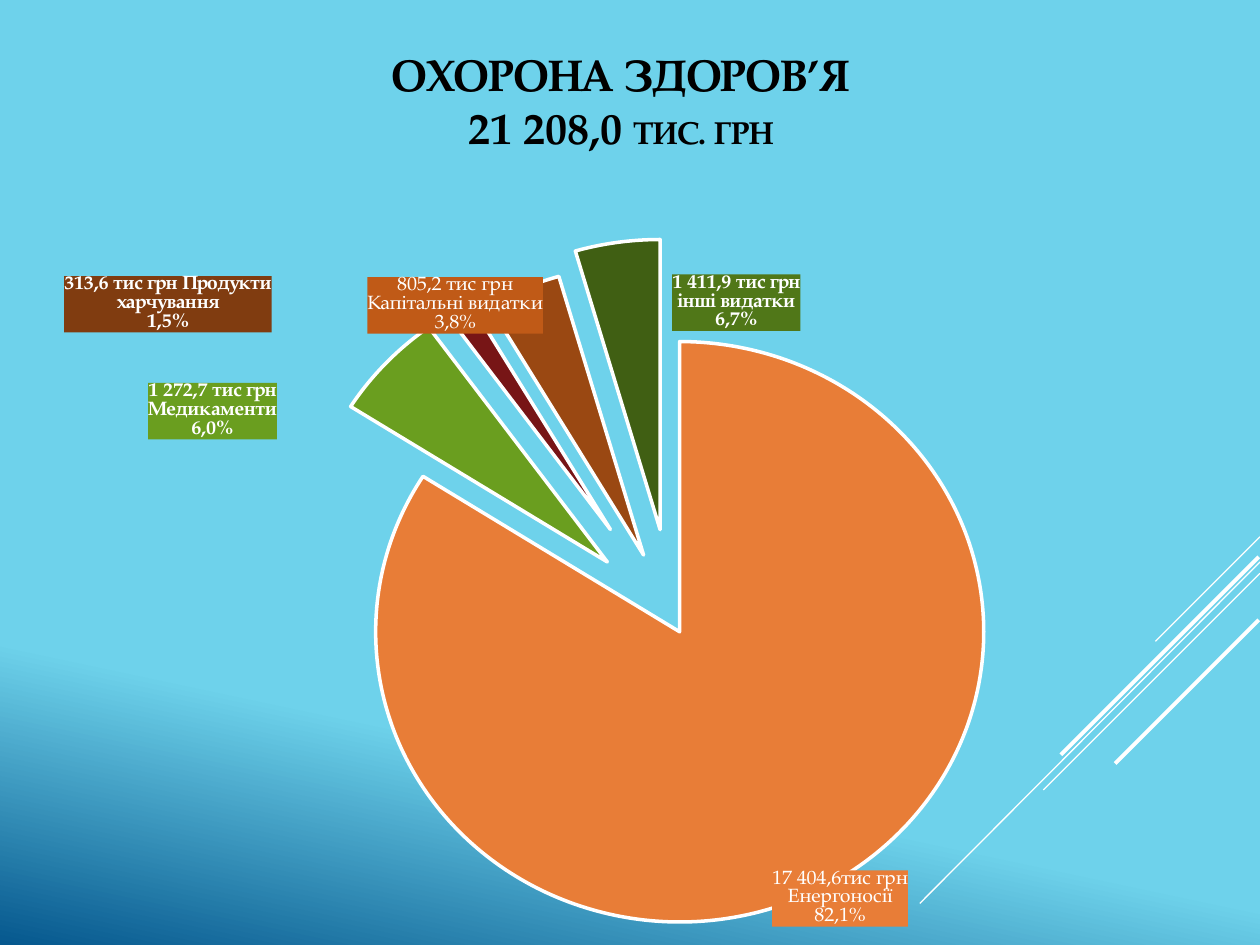
from lxml import etree
from pptx import Presentation
from pptx.chart.data import CategoryChartData
from pptx.dml.color import RGBColor
from pptx.enum.chart import XL_CHART_TYPE, XL_LABEL_POSITION
from pptx.enum.shapes import MSO_CONNECTOR
from pptx.enum.text import MSO_ANCHOR, PP_ALIGN
from pptx.oxml import parse_xml
from pptx.oxml.ns import nsdecls, qn
from pptx.util import Inches, Pt

PIE = XL_CHART_TYPE.PIE
OUTSIDE_END = XL_LABEL_POSITION.OUTSIDE_END
STRAIGHT = MSO_CONNECTOR.STRAIGHT
MIDDLE = MSO_ANCHOR.MIDDLE
CENTER = PP_ALIGN.CENTER

BLACK = RGBColor(0x00, 0x00, 0x00)
WHITE = RGBColor(0xFF, 0xFF, 0xFF)
SKY = RGBColor(0x6E, 0xD2, 0xEB)
DEEP_BLUE = RGBColor(0x06, 0x58, 0x8E)
RED = RGBColor(0xC6, 0x23, 0x24)
ORANGE = RGBColor(0xE8, 0x7D, 0x37)
GREEN = RGBColor(0x6A, 0x9E, 0x1F)
MAROON = RGBColor(0x77, 0x15, 0x16)
BROWN = RGBColor(0x9A, 0x48, 0x12)
DARK_GREEN = RGBColor(0x40, 0x5F, 0x13)
LABEL_BROWN = RGBColor(0x80, 0x3C, 0x10)
LABEL_ORANGE = RGBColor(0xC0, 0x5A, 0x17)
LABEL_GREEN = RGBColor(0x50, 0x77, 0x18)

RAYS = [
    (10, 4.26, 9.17, 5.09, 0.75),
    (10, 4.46, 7.3, 7.17, 0.75),
    (10, 4.55, 8.28, 6.27, 0.75),
    (9.99, 4.42, 8.42, 5.99, 2.25),
    (9.99, 4.92, 8.85, 6.06, 2.25),
]
EXPENSES = [
    ("", None, RED, 0, None),
    ("Енергоносії", 84, ORANGE, 4,
     (["17 404,6тис грн", "Енергоносії", "82,1%"], ORANGE, False, -0.05, -0.03)),
    ("Медикаменти", 6, GREEN, 30,
     (["1 272,7 тис грн", "Медикаменти", "6,0%"], GREEN, True, -0.09, 0.11)),
    ("Продукти харчування", 1.5, MAROON, 38,
     (["313,6 тис грн Продукти", "харчування", "1,5%"], LABEL_BROWN, True, -0.15, 0.07)),
    ("Капітальні видатки", 4, BROWN, 25,
     (["805,2 тис грн", "Капітальні видатки", "3,8%"], LABEL_ORANGE, False, 0.02, 0.07)),
    ("інші видатки", 4.5, DARK_GREEN, 32,
     (["1 411,9 тис грн", "інші видатки", "6,7%"], LABEL_GREEN, True, 0.16, 0.13)),
]


def manual_layout(**settings):
    entries = "".join(f'<c:{name} val="{value}"/>' for name, value in settings.items())
    return parse_xml(
        f'<c:layout {nsdecls("c")}><c:manualLayout>{entries}</c:manualLayout></c:layout>')


class SlideBuilder:
    heading_font = "TeX Gyre Pagella"
    body_font = "TeX Gyre Adventor"

    def __init__(self, slide):
        self.slide = slide

    def background(self):
        fill = self.slide.background.fill
        fill.gradient()
        fill.gradient_angle = 360 - 102
        for stop, color, position in zip(fill.gradient_stops, (SKY, DEEP_BLUE), (0.75, 1)):
            stop.color.rgb = color
            stop.position = position

    def style(self, font, size, color, bold):
        font.name = self.heading_font
        font.size = Pt(size)
        font.color.rgb = color
        font.bold = bold

    def ray(self, x1, y1, x2, y2, width):
        connector = self.slide.shapes.add_connector(
            STRAIGHT, Inches(x1), Inches(y1), Inches(x2), Inches(y2))
        connector.line.color.rgb = WHITE
        connector.line.width = Pt(width)
        etree.SubElement(connector._element.spPr, qn("a:effectLst"))

    def title(self, text, unit):
        shape = self.slide.shapes.add_textbox(
            Inches(2.72), Inches(0.36), Inches(4.41), Inches(0.87))
        text_frame = shape.text_frame
        text_frame.word_wrap = True
        text_frame.vertical_anchor = MIDDLE
        paragraph = text_frame.paragraphs[0]
        paragraph.text = text
        paragraph.alignment = CENTER
        paragraph.line_spacing = Pt(30.5)
        for run in paragraph.runs:
            self.style(run.font, 25.2, BLACK, True)
        unit_run = paragraph.add_run()
        unit_run.text = unit
        self.style(unit_run.font, 18, BLACK, True)

    def pie(self, expenses):
        chart_data = CategoryChartData()
        chart_data.categories = [expense[0] for expense in expenses]
        chart_data.add_series("Series 1", [expense[1] for expense in expenses])
        chart = self.slide.shapes.add_chart(
            PIE, Inches(0.51), Inches(1.42), Inches(9.13), Inches(6.11), chart_data).chart
        chart.has_legend = False
        chart.has_title = False
        chart.font.name = self.body_font
        chart.font.size = Pt(10)
        chart.font.color.rgb = WHITE
        plot = chart.plots[0]
        plot.vary_by_categories = True
        plot_area = chart._chartSpace.chart.plotArea
        for layout in plot_area.findall(qn("c:layout")):
            plot_area.remove(layout)
        plot_area.insert(0, manual_layout(
            layoutTarget="inner", xMode="edge", yMode="edge", x=0.26, y=0.18, w=0.54, h=0.79))
        series = plot.series[0]
        series.data_labels.show_value = False
        for leader in series._element.iter(qn("c:showLeaderLines")):
            leader.set("val", "0")
        for index, (_, _, color, explosion, label) in enumerate(expenses):
            self.slice(series, index, color, explosion)
            if label:
                self.slice_label(series, index, *label)

    def slice(self, series, index, color, explosion):
        point_format = series.points[index].format
        point_format.fill.solid()
        point_format.fill.fore_color.rgb = color
        point_format.line.color.rgb = WHITE
        point_format.line.width = Pt(2)
        properties = series._element.xpath(f"c:dPt[c:idx/@val='{index}']/c:spPr")[0]
        properties.addprevious(
            parse_xml(f'<c:explosion {nsdecls("c")} val="{explosion}"/>'))

    def slice_label(self, series, index, lines, fill, bold, x, y):
        label = series.points[index].data_label
        text_frame = label.text_frame
        text_frame.text = "\n".join(lines)
        for paragraph in text_frame.paragraphs:
            for run in paragraph.runs:
                self.style(run.font, 11.5, WHITE, bold)
        label.position = OUTSIDE_END
        element = series._element.xpath(f"c:dLbls/c:dLbl[c:idx/@val='{index}']")[0]
        element.find(qn("c:idx")).addnext(manual_layout(x=x, y=y))
        element.find(qn("c:tx")).addnext(parse_xml(
            f'<c:spPr {nsdecls("c", "a")}><a:solidFill><a:srgbClr val="{fill}"/>'
            '</a:solidFill><a:ln><a:noFill/></a:ln></c:spPr>'))


def main():
    presentation = Presentation()
    presentation.slide_width = Inches(10)
    presentation.slide_height = Inches(7.5)
    builder = SlideBuilder(presentation.slides.add_slide(presentation.slide_layouts[6]))
    builder.background()
    for ray in RAYS:
        builder.ray(*ray)
    builder.title("ОХОРОНА ЗДОРОВ’Я\v21 208,0 ", "ТИС. ГРН")
    builder.pie(EXPENSES)
    presentation.save("out.pptx")


if __name__ == "__main__":
    main()
